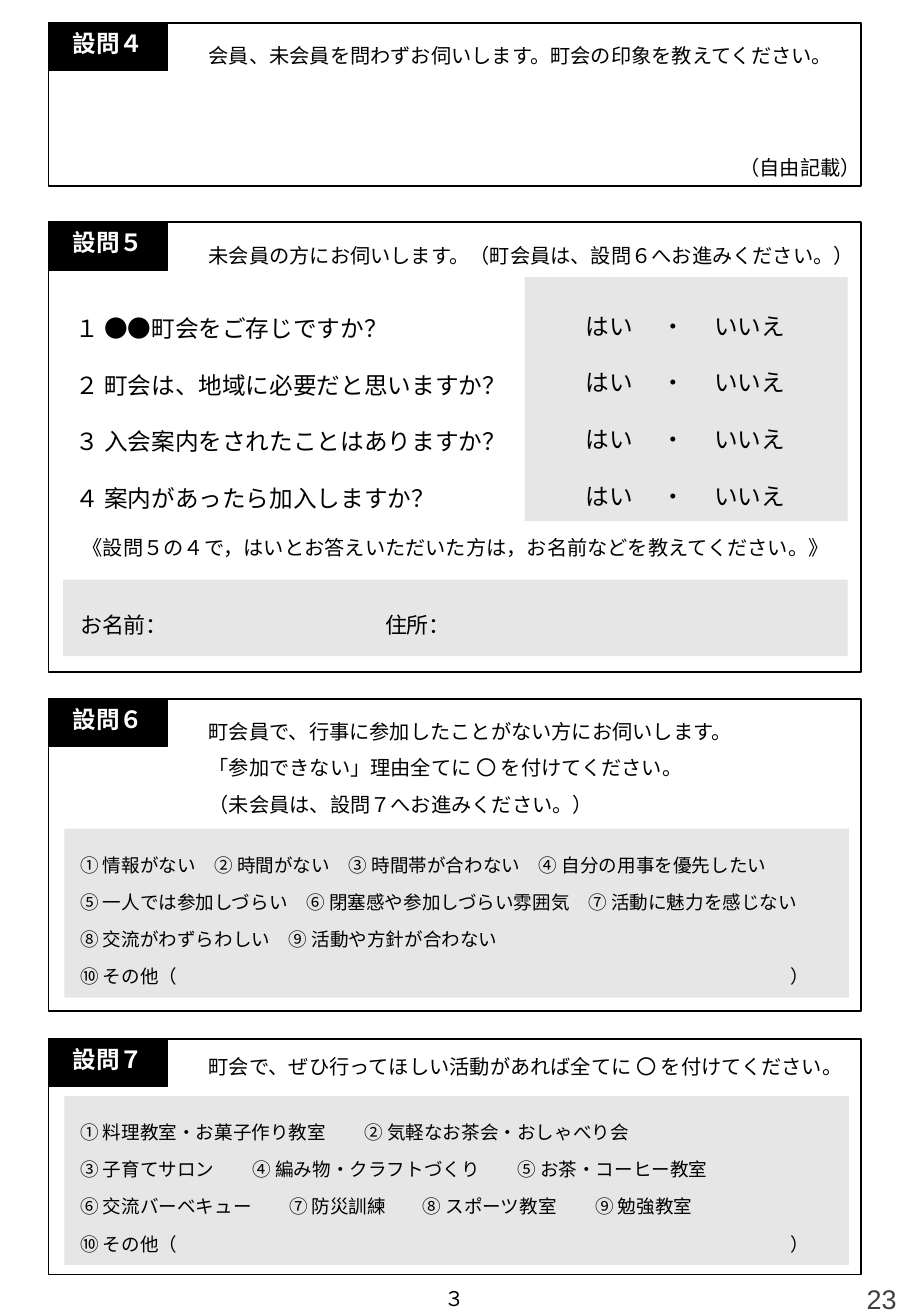
from itertools import zip_longest

from lxml import etree
from pptx import Presentation
from pptx.dml.color import RGBColor
from pptx.enum import shapes, text
from pptx.oxml import ns
from pptx.util import Inches, Pt

COLORS = {"ink": "000000", "paper": "FFFFFF", "panel": "E7E6E6", "page": "404040"}
JAPANESE = "Noto Sans CJK JP"
LEFT, WIDTH = 0.4, 6.69
PANEL_LEFT, PANEL_WIDTH = 0.53, 6.46
OTHER = "⑩ その他（\t）"
OTHER_STOP = 5.85
ALIGN = {"l": text.PP_ALIGN.LEFT, "c": text.PP_ALIGN.CENTER, "r": text.PP_ALIGN.RIGHT}


def write(frame, lines, size=12, font=JAPANESE, color="ink", bold=False, align="l",
          spacing=None, middle=False, wrap=True, inset=0.1, stops=()):
    frame.word_wrap = wrap
    frame.margin_left = Inches(inset)
    frame.vertical_anchor = text.MSO_ANCHOR.MIDDLE if middle else text.MSO_ANCHOR.TOP
    for index, (line, line_stops) in enumerate(zip_longest(lines, stops, fillvalue=())):
        paragraph = frame.add_paragraph() if index else frame.paragraphs[0]
        paragraph.alignment = ALIGN[align]
        paragraph.line_spacing = spacing
        if line_stops:
            tab_list = etree.SubElement(paragraph._p.get_or_add_pPr(), ns.qn("a:tabLst"))
            for stop in line_stops:
                etree.SubElement(tab_list, ns.qn("a:tab"), pos=str(Inches(stop)), algn="l")
        run = paragraph.add_run()
        run.text = line
        run.font.size = Pt(size)
        run.font.bold = bold
        run.font.name = font
        run.font.color.rgb = RGBColor.from_string(COLORS[color])
        etree.SubElement(run.font._element, ns.qn("a:ea"), typeface=font)


class Questionnaire:
    def __init__(self):
        self.deck = Presentation()
        self.deck.slide_width = Inches(7.5)
        self.deck.slide_height = Inches(10.83)
        self.slide = self.deck.slides.add_slide(self.deck.slide_layouts[6])

    def box(self, left, top, width, height, fill=None, line=None):
        box = self.slide.shapes.add_shape(
            shapes.MSO_SHAPE.RECTANGLE, *map(Inches, (left, top, width, height)))
        box.shadow.inherit = False
        if fill:
            box.fill.solid()
            box.fill.fore_color.rgb = RGBColor.from_string(COLORS[fill])
        else:
            box.fill.background()
        if line:
            box.line.color.rgb = RGBColor.from_string(COLORS[line])
            box.line.width = Pt(1)
        else:
            box.line.fill.background()
        return box

    def label(self, left, top, width, height, lines, **style):
        label = self.slide.shapes.add_textbox(*map(Inches, (left, top, width, height)))
        write(label.text_frame, lines, **style)

    def panel(self, left, top, width, height, lines, **style):
        write(self.box(left, top, width, height, fill="panel").text_frame, lines, **style)

    def question(self, title, top, height):
        self.box(LEFT, top, WIDTH, height, line="ink")
        tag = self.box(LEFT, top, 0.98, 0.39, fill="ink", line="ink")
        write(tag.text_frame, [title], size=14, color="paper", bold=True, align="c")

    def options(self, top, lines, stops=()):
        self.panel(PANEL_LEFT, top, PANEL_WIDTH, 1.39, lines, size=11,
                   spacing=Pt(22), middle=True, inset=0.13, stops=stops)


def main():
    form = Questionnaire()
    form.label(3.56, 10.54, 0.37, 0.3, ["３"], wrap=False)

    form.question("設問４", 0.19, 1.34)
    form.label(1.62, 0.21, 5.59, 0.35,
               ["会員、未会員を問わずお伺いします。町会の印象を教えてください。"], spacing=1.5)
    form.label(5.99, 1.23, 1.21, 0.3, ["（自由記載）"], wrap=False)

    form.question("設問５", 1.83, 3.7)
    form.label(1.62, 1.85, 5.59, 0.35,
               ["未会員の方にお伺いします。（町会員は、設問６へお進みください。）"],
               spacing=1.5, wrap=False)
    asked = ["１ ●●町会をご存じですか？", "２ 町会は、地域に必要だと思いますか？",
             "３ 入会案内をされたことはありますか？", "４ 案内があったら加入しますか？"]
    form.panel(4.32, 2.28, 2.66, 2.01, ["はい\t・\tいいえ"] * len(asked), size=14,
               spacing=2.0, inset=0.5, stops=[(0.63, 1.06)] * len(asked))
    form.label(0.52, 2.3, 3.8, 2.01, asked, size=14, spacing=2.0)
    form.label(0.54, 4.36, 6.43, 0.3,
               ["《設問５の４で，はいとお答えいただいた方は，お名前などを教えてください。》"],
               align="c", wrap=False)
    form.panel(0.52, 4.77, PANEL_WIDTH, 0.63, ["お名前：\t住所："], size=13,
               spacing=2.0, inset=0.14, stops=[(2.51,)])

    form.question("設問６", 5.75, 2.57)
    form.label(1.62, 5.77, 4.58, 0.96,
               ["町会員で、行事に参加したことがない方にお伺いします。",
                "「参加できない」理由全てに 〇 を付けてください。",
                "（未会員は、設問７へお進みください。）"], spacing=1.5)
    form.options(6.82, [
        "① 情報がない　② 時間がない　③ 時間帯が合わない　④ 自分の用事を優先したい",
        "⑤ 一人では参加しづらい　⑥ 閉塞感や参加しづらい雰囲気　⑦ 活動に魅力を感じない",
        "⑧ 交流がわずらわしい　⑨ 活動や方針が合わない",
        OTHER], stops=[(), (), (), (OTHER_STOP,)])

    form.question("設問７", 8.55, 1.94)
    form.label(1.62, 8.59, 5.48, 0.3,
               ["町会で、ぜひ行ってほしい活動があれば全てに 〇 を付けてください。"],
               spacing=Pt(17))
    form.options(9.02, [
        "① 料理教室・お菓子作り教室\t② 気軽なお茶会・おしゃべり会",
        "③ 子育てサロン\t④ 編み物・クラフトづくり\t⑤ お茶・コーヒー教室",
        "⑥ 交流バーベキュー\t⑦ 防災訓練\t⑧ スポーツ教室\t⑨ 勉強教室",
        OTHER], stops=[(2.34,), (1.42, 3.6), (1.72, 2.82, 4.24), (OTHER_STOP,)])

    form.label(6.94, 10.54, 0.54, 0.29, ["23"], size=16, font="Arial", color="page",
               align="r", middle=True)
    form.deck.save("out.pptx")


if __name__ == "__main__":
    main()
